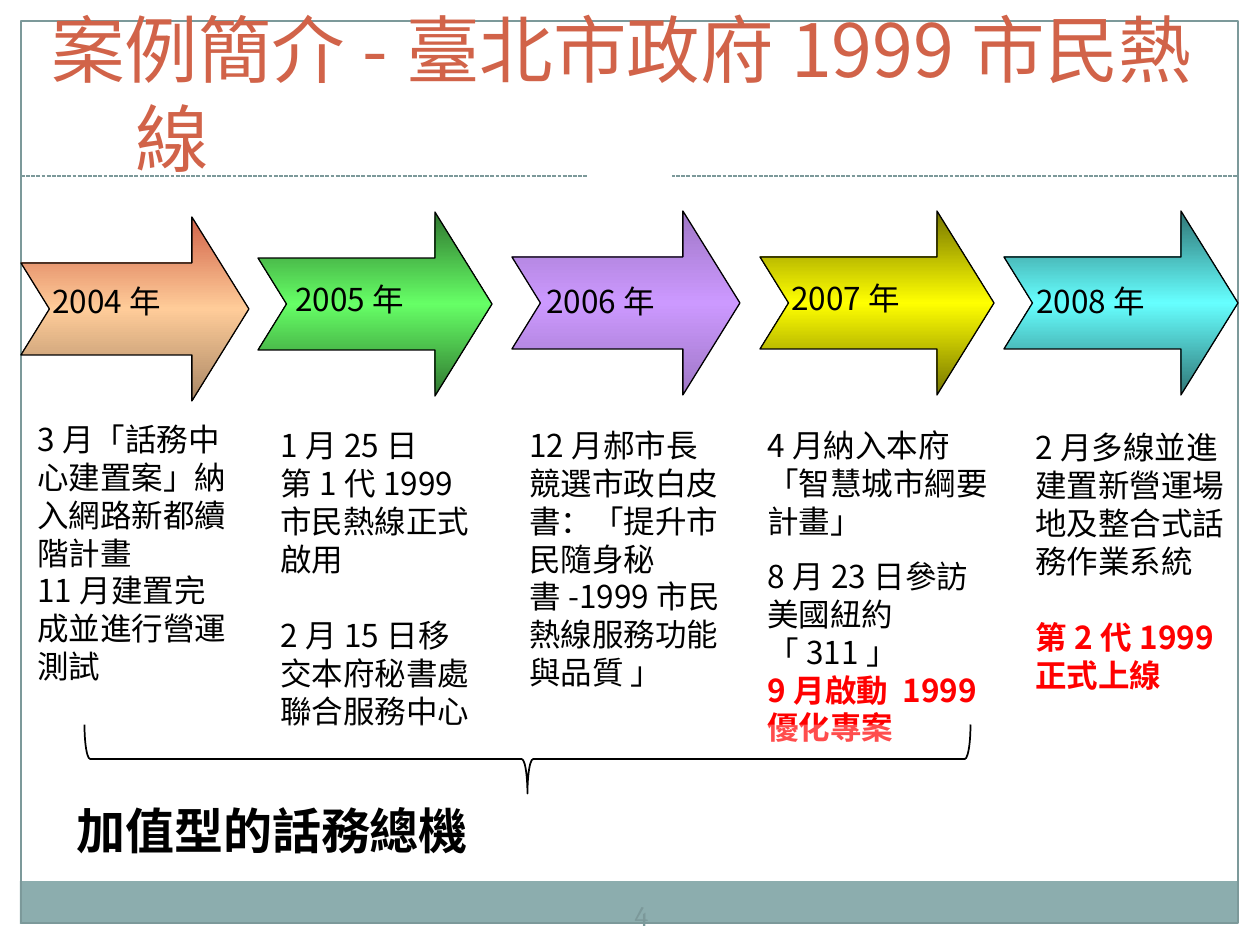
from copy import deepcopy

from lxml import etree
from pptx import Presentation
from pptx import util as u
from pptx.dml.color import RGBColor
from pptx.enum import dml, shapes, text
from pptx.oxml.ns import qn

FONT = "Noto Sans CJK SC"
BLACK, RED, TEAL, ORANGE = "000000", "FF0000", "7C999A", "D16349"

TITLE = "案例簡介-臺北市政府1999市民熱線"
SUMMARY = "加值型的話務總機"

# Year, arrow box, label left and top, gradient from top to bottom
ARROWS = [
    ("2004年", (21, 217, 228, 184), (40, 276), ("D16349", "FFCC99", "A98765")),
    ("2005年", (258, 212, 234, 184), (283, 274), ("2F762F", "66FF66", "2F762F")),
    ("2006年", (512, 211, 228, 184), (534, 276), ("9F77C6", "CC99FF", "9F77C6")),
    ("2007年", (760, 211, 234, 184), (779, 273), ("767600", "FFFF00", "767600")),
    ("2008年", (1004, 211, 234, 184), (1024, 276), ("2F7676", "66FFFF", "2F7676")),
]

# Text box, then paragraphs: wording, points of space before, highlighted
EVENTS = [
    ((25, 414, 218, 280), [
        ("3月「話務中心建置案」納入網路新都續階計畫", 0, False),
        ("11月建置完成並進行營運測試", 0, False)]),
    ((268, 420, 218, 357), [
        ("1月25日", 0, False),
        ("第1代1999市民熱線正式啟用", 0, False),
        ("2月15日移交本府秘書處聯合服務中心", 22, False)]),
    ((517, 420, 218, 280), [
        ("12月郝市長競選市政白皮書：「提升市民隨身秘書-1999市民熱線服務功能與品質 」", 0, False)]),
    ((755, 420, 253, 297), [
        ("4月納入本府「智慧城市綱要計畫」", 0, False),
        ("8月23日參訪美國紐約「311」", 10, False),
        ("9月啟動 1999優化專案", 0, True)]),
    ((1023, 422, 218, 280), [
        ("2月多線並進建置新營運場地及整合式話務作業系統", 0, False),
        ("第2代1999正式上線", 22, True)]),
]


def px(value):
    return u.Emu(round(value * 914400 / 126))


def color(value):
    return RGBColor.from_string(value)


def add_shape(slide, kind, box, fill=None, line=None, width=0.75):
    shape = slide.shapes.add_shape(kind, *map(px, box))
    shape.shadow.inherit = False
    if fill:
        shape.fill.solid()
        shape.fill.fore_color.rgb = color(fill)
    else:
        shape.fill.background()
    if line:
        shape.line.color.rgb = color(line)
        shape.line.width = u.Pt(width)
    else:
        shape.line.fill.background()
    return shape


def add_text(slide, box, paragraphs, size=18, fill=BLACK, bold=False, name=FONT):
    frame = slide.shapes.add_textbox(*map(px, box)).text_frame
    frame.word_wrap = True
    for index, (wording, before, highlighted) in enumerate(paragraphs):
        paragraph = frame.add_paragraph() if index else frame.paragraphs[0]
        paragraph.text = wording
        if before:
            paragraph.space_before = u.Pt(before)
        for run in paragraph.runs:
            run.font.size = u.Pt(size)
            run.font.bold = bold or highlighted
            run.font.color.rgb = color(RED if highlighted else fill)
            run.font.name = name
            etree.SubElement(run.font._element, qn("a:ea"), typeface=name)
    return frame


def add_arrow(slide, box, colors):
    shape = add_shape(slide, shapes.MSO_SHAPE.NOTCHED_RIGHT_ARROW, box, line=BLACK)
    shape.adjustments[0] = 0.5
    shape.adjustments[1] = 0.31
    shape.fill.gradient()
    shape.fill.gradient_angle = 270
    stop_list = shape._element.spPr.find(".//" + qn("a:gsLst"))
    stop_list.append(deepcopy(stop_list[0]))
    for stop, position, value in zip(shape.fill.gradient_stops, (0, 0.5, 1), colors):
        stop.position = position
        stop.color.rgb = color(value)


def main():
    presentation = Presentation()
    presentation.slide_width, presentation.slide_height = px(1260), px(945)
    slide = presentation.slides.add_slide(presentation.slide_layouts[6])

    # Frame, footer band and dashed rule with a gap in the middle
    add_shape(slide, shapes.MSO_SHAPE.RECTANGLE, (20, 881, 1217, 43), "8CADAE")
    add_shape(slide, shapes.MSO_SHAPE.RECTANGLE, (21, 21, 1217, 902), line=TEAL)
    rule = slide.shapes.add_connector(
        shapes.MSO_CONNECTOR.STRAIGHT, px(21), px(176), px(1238), px(176))
    rule.line.color.rgb = color(TEAL)
    rule.line.width = u.Pt(0.75)
    rule.line.dash_style = dml.MSO_LINE.SQUARE_DOT
    etree.SubElement(rule._element.spPr, qn("a:effectLst"))
    add_shape(slide, shapes.MSO_SHAPE.OVAL, (588, 132, 84, 84), "FFFFFF")

    # Title with a hanging indent
    title = add_text(slide, (39, 39, 1221, 107), [(TITLE, 0, False)], 42, ORANGE)
    title.vertical_anchor = text.MSO_ANCHOR.MIDDLE
    properties = title.paragraphs[0]._p.get_or_add_pPr()
    properties.set("marL", str(px(84)))
    properties.set("indent", str(px(-84)))

    # Timeline
    for year, box, (left, top), colors in ARROWS:
        add_arrow(slide, box, colors)
        add_text(slide, (left, top, 199, 50), [(year, 0, False)])
    for box, paragraphs in EVENTS:
        add_text(slide, box, paragraphs)

    # Summary under a translucent brace
    add_text(slide, (64, 794, 925, 72), [(SUMMARY, 0, False)], 28, bold=True)
    brace = add_shape(slide, shapes.MSO_SHAPE.LEFT_BRACE,
                      (493, 316, 69, 886), "FFFFFF", BLACK, 1)
    brace.rotation = 270
    brace.adjustments[0] = 0.083
    etree.SubElement(brace.fill._xPr.find(".//" + qn("a:srgbClr")),
                     qn("a:alpha"), val="30000")

    # Slide number
    number = add_text(slide, (610, 885, 63, 60), [("4", 0, False)], 16, TEAL, name="Cambria")
    number.vertical_anchor = text.MSO_ANCHOR.MIDDLE
    number.margin_left = number.margin_right = px(6)
    number.paragraphs[0].alignment = text.PP_ALIGN.CENTER

    presentation.save("out.pptx")


if __name__ == "__main__":
    main()
